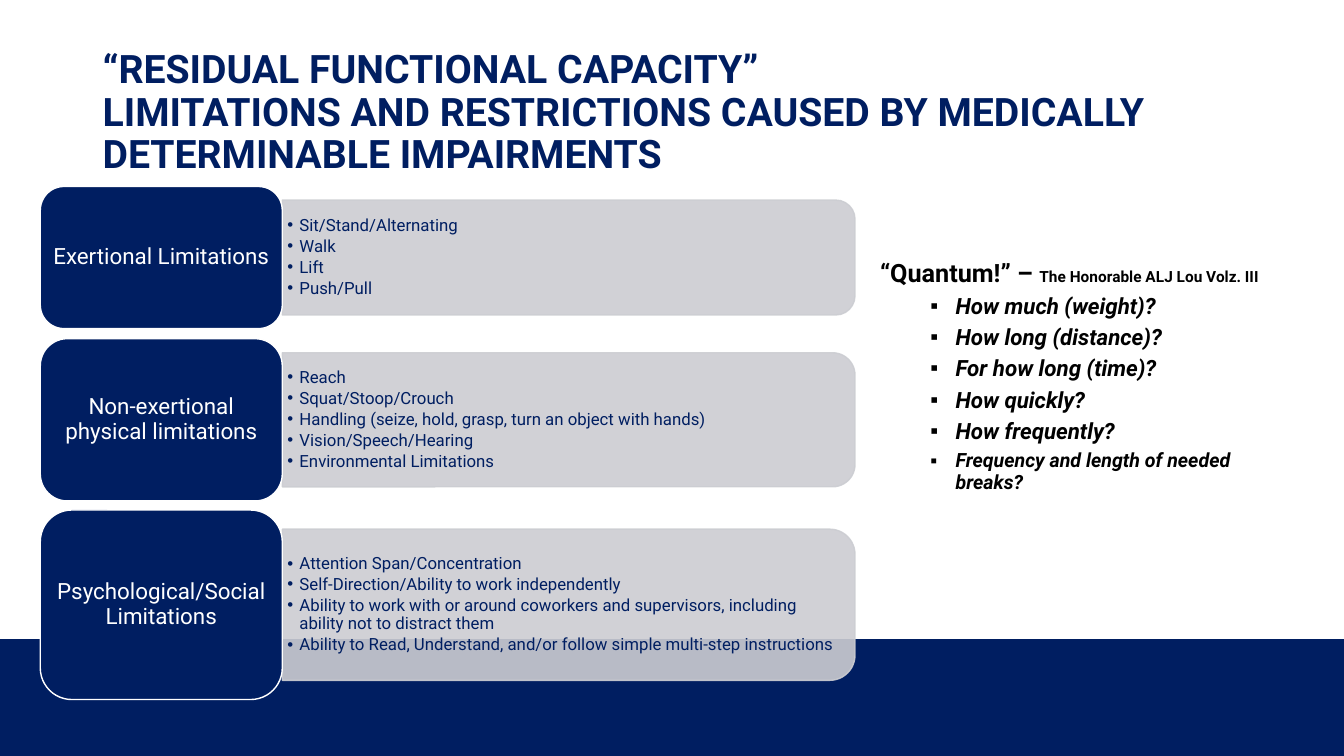
from lxml import etree
from pptx import Presentation
from pptx.dml.color import RGBColor
from pptx.enum.shapes import MSO_SHAPE
from pptx.enum.text import MSO_ANCHOR, PP_ALIGN
from pptx.oxml.ns import qn
from pptx.util import Inches, Pt

RECTANGLE = MSO_SHAPE.RECTANGLE
ROUNDED = MSO_SHAPE.ROUNDED_RECTANGLE
ROUNDED_TOP = MSO_SHAPE.ROUND_2_SAME_RECTANGLE
TOP, MIDDLE = MSO_ANCHOR.TOP, MSO_ANCHOR.MIDDLE
CENTER = PP_ALIGN.CENTER

FONT = "Roboto"
NAVY, GRAY, WHITE, BLACK = "001E61", "CCCDD2", "FFFFFF", "000000"

TITLE = ("“RESIDUAL FUNCTIONAL CAPACITY”\v"
         "LIMITATIONS AND RESTRICTIONS CAUSED BY MEDICALLY DETERMINABLE IMPAIRMENTS")

# Label, card top, card height, panel height, bullet items
LIMITATIONS = [
    ("Exertional Limitations", 1.85, 1.41, 1.14,
     ["Sit/Stand/Alternating", "Walk", "Lift", "Push/Pull"]),
    ("Non-exertional physical limitations", 3.36, 1.61, 1.33,
     ["Reach", "Squat/Stoop/Crouch",
      "Handling (seize, hold, grasp, turn an object with hands)",
      "Vision/Speech/Hearing", "Environmental Limitations"]),
    ("Psychological/Social Limitations", 5.06, 1.88, 1.5,
     ["Attention Span/Concentration",
      "Self-Direction/Ability to work independently",
      "Ability to work with or around coworkers and supervisors, including "
      "ability not to distract them",
      "Ability to Read, Understand, and/or follow simple multi-step instructions"]),
]

# Question, text size
QUESTIONS = [
    ("How much (weight)?", 16),
    ("How long (distance)?", 16),
    ("For how long (time)?", 16),
    ("How quickly?", 16),
    ("How frequently?", 16),
    ("Frequency and length of needed breaks?", 14),
]


def color(hex_string):
    return RGBColor.from_string(hex_string)


def add_filled_shape(slide, kind, left, top, width, height, fill, line=None):
    shape = slide.shapes.add_shape(kind, Inches(left), Inches(top),
                                   Inches(width), Inches(height))
    shape.shadow.inherit = False
    shape.fill.solid()
    shape.fill.fore_color.rgb = color(fill)
    if line:
        shape.line.color.rgb = color(line)
        shape.line.width = Pt(1)
    else:
        shape.line.fill.background()
    return shape


def set_opacity(shape, percent):
    for solid_fill in shape.element.spPr.iter(qn("a:solidFill")):
        alpha = etree.SubElement(solid_fill[0], qn("a:alpha"))
        alpha.set("val", str(percent * 1000))


def prepare_frame(shape, anchor, inset_x=0.1, inset_y=0.05):
    frame = shape.text_frame
    frame.word_wrap = True
    frame.vertical_anchor = anchor
    frame.margin_left = frame.margin_right = Inches(inset_x)
    frame.margin_top = frame.margin_bottom = Inches(inset_y)
    return frame


def add_text_box(slide, left, top, width, height, anchor, *insets):
    box = slide.shapes.add_textbox(Inches(left), Inches(top),
                                   Inches(width), Inches(height))
    return prepare_frame(box, anchor, *insets)


def format_runs(paragraph, size, text_color, bold=False, italic=False):
    paragraph.line_spacing = 0.9
    for run in paragraph.runs:
        run.font.name = FONT
        run.font.size = Pt(size)
        run.font.color.rgb = color(text_color)
        run.font.bold = bold
        run.font.italic = italic


def set_bullet(paragraph, character, margin, hanging):
    properties = paragraph._p.get_or_add_pPr()
    properties.set("marL", str(Inches(margin)))
    properties.set("indent", str(-Inches(hanging)))
    bullet_font = etree.SubElement(properties, qn("a:buFont"))
    bullet_font.set("typeface", "Arial")
    etree.SubElement(properties, qn("a:buChar")).set("char", character)


def add_title(slide, left, top, width, height):
    frame = add_text_box(slide, left, top, width, height, MIDDLE)
    paragraph = frame.paragraphs[0]
    paragraph.text = TITLE
    format_runs(paragraph, 28, NAVY, bold=True)


def add_limitation_row(slide, left, top, width, height, card_width,
                       panel_height, label, items):
    # Gray panel, turned so that its round corners face right
    panel_left = left + card_width
    panel_width = width - card_width
    center_x = panel_left + panel_width / 2
    center_y = top + height / 2
    panel = add_filled_shape(slide, ROUNDED_TOP, center_x - panel_height / 2,
                             center_y - panel_width / 2, panel_height,
                             panel_width, GRAY, GRAY)
    panel.rotation = 90
    set_opacity(panel, 90)

    # Bullet items over the panel
    frame = add_text_box(slide, panel_left, center_y - panel_height / 2,
                         panel_width - 0.06, panel_height, MIDDLE, 0.05, 0.03)
    for index, item in enumerate(items):
        paragraph = frame.add_paragraph() if index else frame.paragraphs[0]
        paragraph.text = item
        set_bullet(paragraph, "•", 0.12, 0.12)
        paragraph.space_after = Pt(2)
        format_runs(paragraph, 12, NAVY)

    # Label card
    card = add_filled_shape(slide, ROUNDED, left, top, card_width, height,
                            NAVY, WHITE)
    paragraph = prepare_frame(card, MIDDLE, 0.06, 0.03).paragraphs[0]
    paragraph.text = label
    paragraph.alignment = CENTER
    format_runs(paragraph, 16, WHITE)


def add_quantum_list(slide, left, top, width, height):
    frame = add_text_box(slide, left, top, width, height, TOP)
    heading = frame.paragraphs[0]
    heading.text = "“Quantum!” – "
    judge = heading.add_run()
    judge.text = "The Honorable ALJ Lou Volz. III"
    format_runs(heading, 18, BLACK, bold=True)
    judge.font.size = Pt(11)

    for question, size in QUESTIONS:
        paragraph = frame.add_paragraph()
        paragraph.text = question
        paragraph.level = 1
        set_bullet(paragraph, "▪", 0.75, 0.25)
        paragraph.space_before = Pt(5)
        format_runs(paragraph, size, BLACK, bold=True, italic=True)


def main():
    presentation = Presentation()
    presentation.slide_width = Inches(13.33)
    presentation.slide_height = Inches(7.5)
    slide = presentation.slides.add_slide(presentation.slide_layouts[6])

    # Footer band
    add_filled_shape(slide, RECTANGLE, 0, 6.34, 13.33, 1.16, NAVY)

    add_title(slide, 0.92, 0.4, 11.5, 1.45)
    add_quantum_list(slide, 8.63, 2.54, 4.03, 2.22)
    for label, top, height, panel_height, items in LIMITATIONS:
        add_limitation_row(slide, 0.4, top, 8.08, height, 2.4,
                           panel_height, label, items)

    presentation.save("out.pptx")


if __name__ == "__main__":
    main()
